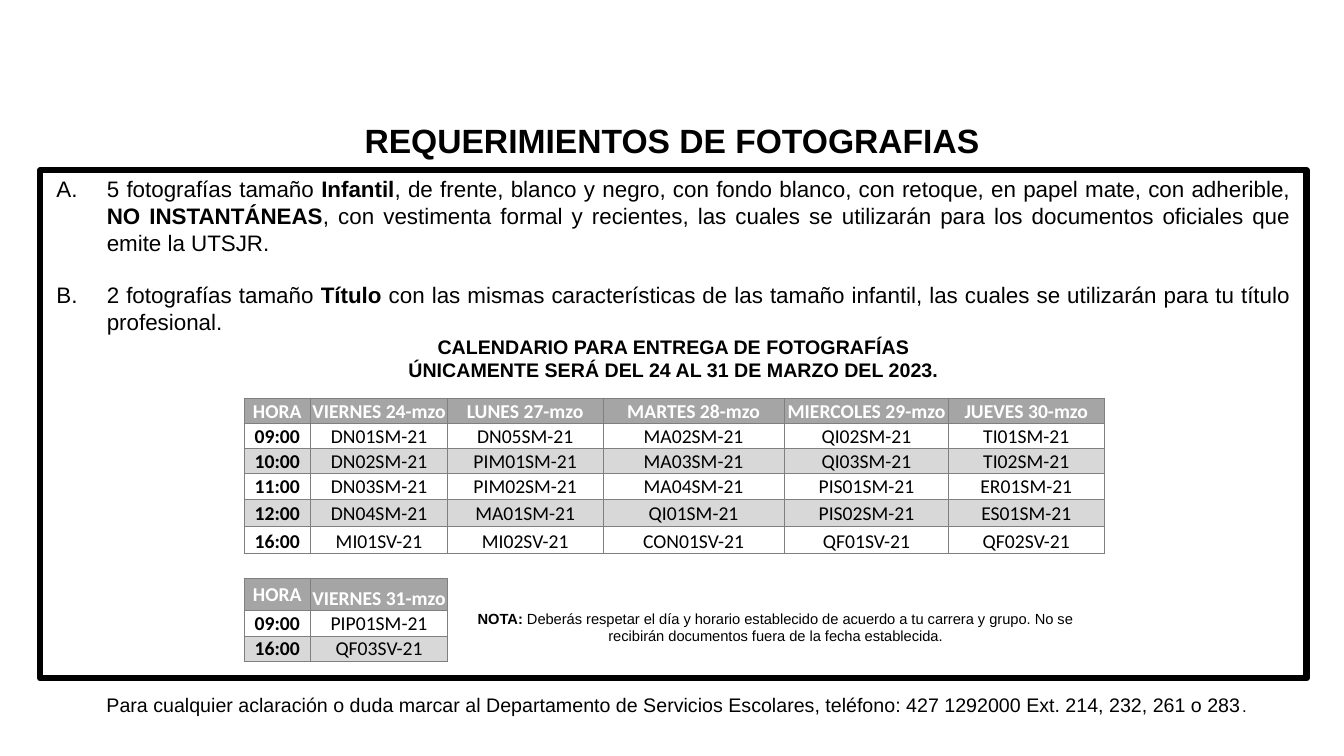
"""Build the slide with the photograph requirements and the delivery calendar."""
from dataclasses import dataclass
from typing import Any

from lxml.etree import SubElement
from pptx import Presentation
from pptx.dml.color import RGBColor
from pptx.enum.shapes import MSO_SHAPE
from pptx.enum.text import MSO_ANCHOR, PP_ALIGN
from pptx.oxml.ns import qn
from pptx.util import Inches, Pt

BLACK, WHITE, GRAY, LIGHT_GRAY, BORDER = "000000", "FFFFFF", "A5A5A5", "D8D8D8", "7F7F7F"
NO_TABLE_STYLE = "{2D5ABB26-0587-4C30-8999-92F81FD0307C}"


@dataclass(frozen=True)
class Run:
    """A piece of text with its character format."""

    text: str
    size: float = 14
    bold: bool = False
    color: str = BLACK
    font: str = "Arial"


@dataclass(frozen=True)
class Requirement:
    """A lettered paragraph and the space above it."""

    number: int
    space_before: float
    runs: tuple[Run, ...]


@dataclass(frozen=True)
class Schedule:
    """A block of the calendar: its first row, row heights and rows of text."""

    first_row: int
    heights: tuple[float, ...]
    rows: tuple[str, ...]
    right_edge: bool


REQUIREMENTS = (
    Requirement(1, 0, (
        Run("5 fotografías tamaño", 16),
        Run(" Infantil", 16, True),
        Run(", de frente, blanco y negro, con fondo blanco, con retoque, en papel mate, "
            "con adherible, ", 16),
        Run("NO INSTANTÁNEAS", 16, True),
        Run(", con vestimenta formal y recientes, las cuales se utilizarán para los "
            "documentos oficiales que emite la UTSJR.", 16))),
    Requirement(2, 18, (
        Run("2 fotografías tamaño ", 16),
        Run("Título ", 16, True),
        Run("con las mismas características de las tamaño infantil, las cuales se "
            "utilizarán para tu título profesional.", 16))),
)
CALENDAR_HEADINGS = (
    "CALENDARIO PARA ENTREGA DE FOTOGRAFÍAS",
    "ÚNICAMENTE SERÁ DEL 24 AL 31 DE MARZO DEL 2023.",
)
COLUMN_WIDTHS = (0.66, 1.36, 1.54, 1.8, 1.63, 1.54)
GAP_HEIGHT = 0.25
SCHEDULES = (
    Schedule(0, (0.25, 0.25, 0.25, 0.25, 0.27, 0.27), (
        "HORA|VIERNES 24-mzo|LUNES 27-mzo|MARTES 28-mzo|MIERCOLES 29-mzo|JUEVES 30-mzo",
        "09:00|DN01SM-21|DN05SM-21|MA02SM-21|QI02SM-21|TI01SM-21",
        "10:00|DN02SM-21|PIM01SM-21|MA03SM-21|QI03SM-21|TI02SM-21",
        "11:00|DN03SM-21|PIM02SM-21|MA04SM-21|PIS01SM-21|ER01SM-21",
        "12:00|DN04SM-21|MA01SM-21|QI01SM-21|PIS02SM-21|ES01SM-21",
        "16:00|MI01SV-21|MI02SV-21|CON01SV-21|QF01SV-21|QF02SV-21"), True),
    Schedule(7, (0.32, 0.25, 0.25), (
        "HORA|VIERNES 31-mzo",
        "09:00|PIP01SM-21",
        "16:00|QF03SV-21"), False),
)
NOTE = (
    Run("NOTA:", 10.5, True),
    Run(" Deberás respetar el día y horario establecido de acuerdo a tu carrera y grupo. "
        "No se recibirán documentos fuera de la fecha establecida.", 10.5),
)
CONTACT = (
    Run("Para cualquier aclaración o duda marcar al Departamento de Servicios Escolares, "
        "teléfono: 427 1292000 Ext. 214, 232, 261 o 283"),
    Run(".", 12),
)


def color(value: str) -> RGBColor:
    """Turn a hex string into a colour."""
    return RGBColor.from_string(value)


def apply(target: Any, values: dict[str, Any]) -> None:
    """Set each named attribute of the target."""
    for name, value in values.items():
        setattr(target, name, value)


def place(shape: Any, left: float, top: float, width: float, height: float) -> None:
    """Move and size a shape, in inches."""
    apply(shape, {"left": Inches(left), "top": Inches(top),
                  "width": Inches(width), "height": Inches(height)})


def write(paragraph: Any, runs: tuple[Run, ...], **paragraph_format: Any) -> None:
    """Format a paragraph and fill it with runs."""
    apply(paragraph, {"alignment": PP_ALIGN.CENTER, **paragraph_format})
    for run in runs:
        text_run = paragraph.add_run()
        text_run.text = run.text
        apply(text_run.font, {"size": Pt(run.size), "bold": run.bold, "name": run.font})
        text_run.font.color.rgb = color(run.color)


def add_letter(paragraph: Any, number: int) -> None:
    """Give a paragraph a hanging capital letter."""
    properties = paragraph._p.get_or_add_pPr()
    properties.set("marL", str(Inches(0.5)))
    properties.set("indent", str(-Inches(0.5)))
    SubElement(properties, qn("a:buAutoNum"), type="alphaUcPeriod", startAt=str(number))


def add_title(slide: Any) -> None:
    """Move and fill the title placeholder."""
    title = slide.shapes.title
    place(title, 1.34, 0.97, 10.65, 0.88)
    title.text_frame.vertical_anchor = MSO_ANCHOR.MIDDLE
    write(title.text_frame.paragraphs[0], (Run("REQUERIMIENTOS DE FOTOGRAFIAS", 24, True),),
          line_spacing=0.9)


def add_requirements(slide: Any) -> None:
    """Draw the framed box with the requirements and the calendar heading."""
    box = slide.shapes.add_shape(MSO_SHAPE.RECTANGLE, 0, 0, 0, 0)
    place(box, 0.4, 1.69, 12.56, 5.04)
    box.shadow.inherit = False
    box.fill.background()
    box.line.color.rgb = color(BLACK)
    box.line.width = Pt(4.5)
    frame = box.text_frame
    apply(frame, {"word_wrap": True, "vertical_anchor": MSO_ANCHOR.TOP,
                  "margin_left": Inches(0.16), "margin_right": Inches(0.16)})
    paragraph = frame.paragraphs[0]
    for requirement in REQUIREMENTS:
        add_letter(paragraph, requirement.number)
        write(paragraph, requirement.runs, alignment=PP_ALIGN.JUSTIFY,
              space_before=Pt(requirement.space_before))
        paragraph = frame.add_paragraph()
    write(paragraph, (Run(CALENDAR_HEADINGS[0], bold=True),))
    write(frame.add_paragraph(), (Run(CALENDAR_HEADINGS[1], bold=True),))


def add_borders(cell: Any, edges: str) -> None:
    """Draw thin lines on the given edges of a cell."""
    properties = cell._tc.get_or_add_tcPr()
    for edge in edges:
        line = SubElement(properties, qn(f"a:ln{edge}"), w=str(Pt(0.5)))
        fill = SubElement(line, qn("a:solidFill"))
        SubElement(fill, qn("a:srgbClr"), val=BORDER)


def fill_schedule(table: Any, schedule: Schedule) -> None:
    """Write one block of the calendar into the table."""
    for index, (height, row) in enumerate(zip(schedule.heights, schedule.rows)):
        table.rows[schedule.first_row + index].height = Inches(height)
        for column, text in enumerate(row.split("|")):
            cell = table.cell(schedule.first_row + index, column)
            header = index == 0
            open_right = column == 1 and not schedule.right_edge
            add_borders(cell, "LTB" if open_right else "LRTB")
            if header or index % 2 == 0:
                cell.fill.solid()
                cell.fill.fore_color.rgb = color(GRAY if header else LIGHT_GRAY)
            if header and column == 0:
                cell.vertical_anchor = MSO_ANCHOR.MIDDLE
            write(cell.text_frame.paragraphs[0], (
                Run(text, 14, header or column == 0, WHITE if header else BLACK, "Calibri"),))


def add_calendar(slide: Any) -> None:
    """Add the table with both blocks of the calendar and the note."""
    frame = slide.shapes.add_table(10, len(COLUMN_WIDTHS), Inches(2.42), Inches(3.95),
                                   Inches(sum(COLUMN_WIDTHS)), Inches(2.6))
    table = frame.table
    apply(table, {"first_row": False, "horz_banding": False})
    table._tbl.tblPr.find(qn("a:tableStyleId")).text = NO_TABLE_STYLE
    for column, width in zip(table.columns, COLUMN_WIDTHS):
        column.width = Inches(width)
    for cell in table.iter_cells():
        apply(cell, {"margin_left": Inches(0.01), "margin_right": Inches(0.01),
                     "margin_top": Inches(0.01), "margin_bottom": 0,
                     "vertical_anchor": MSO_ANCHOR.BOTTOM})
        cell.fill.background()
    table.rows[6].height = Inches(GAP_HEIGHT)
    for schedule in SCHEDULES:
        fill_schedule(table, schedule)
    note = table.cell(8, 2)
    note.merge(table.cell(9, 5))
    note.vertical_anchor = MSO_ANCHOR.TOP
    write(note.text_frame.paragraphs[0], NOTE)
    for cell in table.iter_cells():
        if not cell.text_frame.text:
            SubElement(cell.text_frame.paragraphs[0]._p, qn("a:endParaRPr"), sz="1400")


def add_contact(slide: Any) -> None:
    """Add the contact line below the box."""
    box = slide.shapes.add_textbox(0, 0, 0, 0)
    place(box, 0.37, 6.83, 12.68, 0.34)
    box.text_frame.word_wrap = True
    write(box.text_frame.paragraphs[0], CONTACT)


def main() -> None:
    """Build and save the presentation."""
    presentation = Presentation()
    apply(presentation, {"slide_width": Inches(13.33), "slide_height": Inches(7.5)})
    slide = presentation.slides.add_slide(presentation.slide_layouts[5])
    add_requirements(slide)
    add_title(slide)
    add_calendar(slide)
    add_contact(slide)
    presentation.save("out.pptx")


if __name__ == "__main__":
    main()
